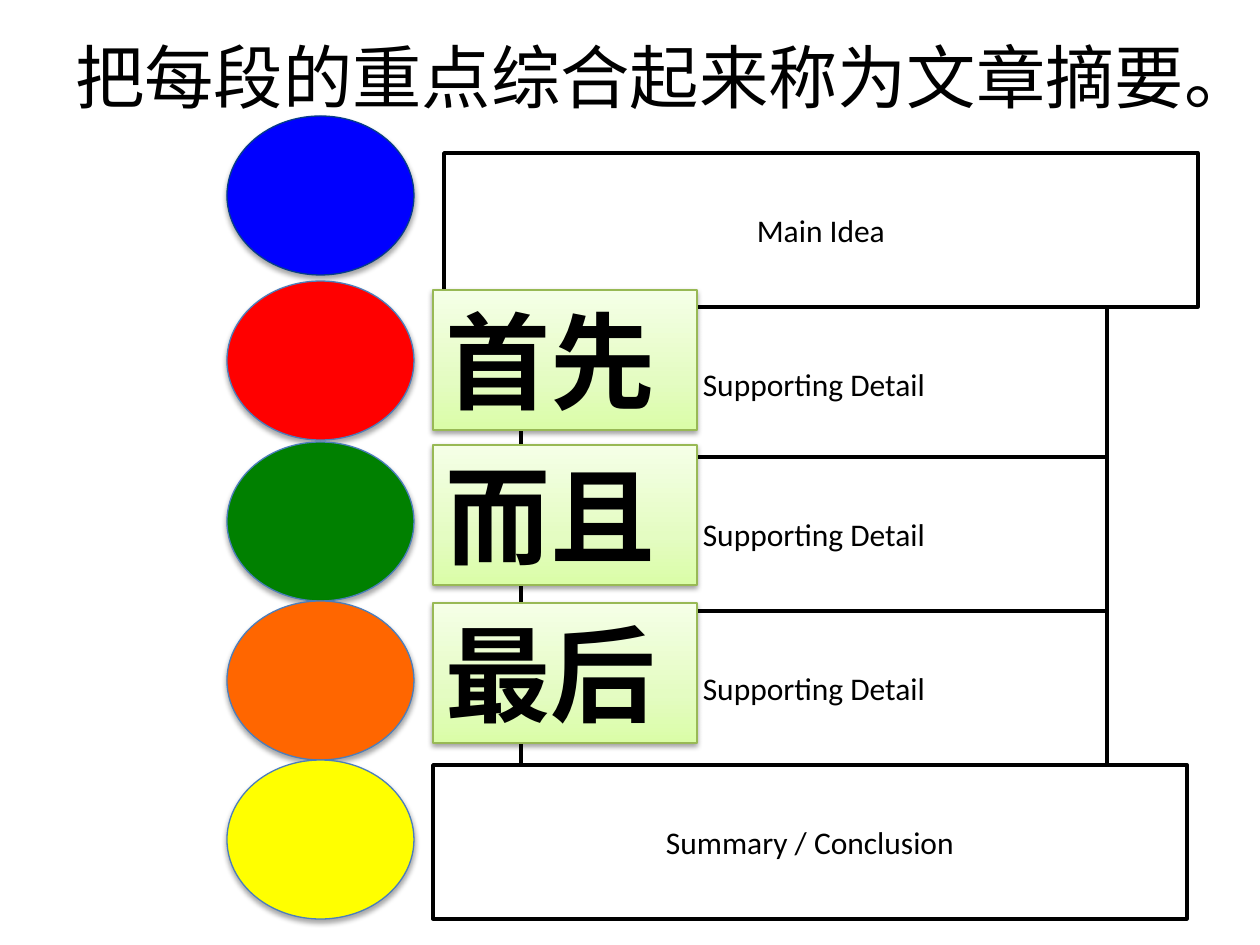
import pptx
import pptx.util
import pptx.dml.color
import pptx.enum.shapes
import pptx.enum.text
import pptx.oxml
import pptx.oxml.ns

EMU_PER_PX = 914400 / 126
FONT = "Calibri"
COLORS = {
    "black": "000000", "white": "FFFFFF",
    "blue": "0000FF", "red": "FF0000", "green": "008000",
    "orange": "FF6600", "yellow": "FFFF00",
    "navy_edge": "073E87", "blue_edge": "4B7EBC", "card_edge": "98B955",
    "card_low": "DAFDA7", "card_mid": "E4FCC2", "card_high": "F5FFE7",
}
CARD_STOPS = [(0, "card_low"), (35, "card_mid"), (100, "card_high")]
SHAPE = pptx.enum.shapes.MSO_SHAPE
ALIGN = pptx.enum.text.PP_ALIGN
ANCHOR = pptx.enum.text.MSO_ANCHOR


def px(*lengths):
    return [pptx.util.Emu(round(n * EMU_PER_PX)) for n in lengths]


def rgb(name):
    return pptx.dml.color.RGBColor.from_string(COLORS[name])


def add_outlined(shapes, kind, box, edge, width):
    shape = shapes.add_shape(kind, *px(*box))
    shape.shadow.inherit = False
    shape.line.color.rgb = rgb(edge)
    shape.line.width = pptx.util.Pt(width)
    return shape


def fill_solid(shape, color):
    shape.fill.solid()
    shape.fill.fore_color.rgb = rgb(color)


def fill_card_gradient(shape):
    shape.fill.gradient()
    shape.fill.gradient_angle = 90
    stops = shape._element.spPr.find(".//" + pptx.oxml.ns.qn("a:gsLst"))
    stops.clear()
    for percent, color in CARD_STOPS:
        stops.append(pptx.oxml.parse_xml(
            f'<a:gs {pptx.oxml.ns.nsdecls("a")} pos="{percent * 1000}">'
            f'<a:srgbClr val="{COLORS[color]}"/></a:gs>'))


def drop_shadow(shape, opacity, distance):
    effects = shape._element.spPr.find(pptx.oxml.ns.qn("a:effectLst"))
    effects.append(pptx.oxml.parse_xml(
        f'<a:outerShdw {pptx.oxml.ns.nsdecls("a")} '
        f'blurRad="{pptx.util.Pt(3.1)}" dist="{pptx.util.Pt(distance)}" '
        f'dir="5400000" rotWithShape="0"><a:srgbClr val="{COLORS["black"]}">'
        f'<a:alpha val="{opacity * 1000}"/></a:srgbClr></a:outerShdw>'))


def set_text(shape, text, size, align, anchor, bold=False):
    frame = shape.text_frame
    frame.word_wrap = True
    frame.vertical_anchor = anchor
    paragraph = frame.paragraphs[0]
    paragraph.text = text
    paragraph.alignment = align
    paragraph.font.name = FONT
    paragraph.font.size = pptx.util.Pt(size)
    paragraph.font.bold = bold
    paragraph.font.color.rgb = rgb("black")


def add_layer(shapes, text, left, top, width):
    layer = add_outlined(shapes, SHAPE.RECTANGLE, (left, top, width, 154), "black", 2)
    fill_solid(layer, "white")
    set_text(layer, text, 18, ALIGN.CENTER, ANCHOR.MIDDLE)


def add_dot(shapes, top, color, edge):
    dot = add_outlined(shapes, SHAPE.OVAL, (227, top, 187, 159), edge, 0.75)
    fill_solid(dot, color)
    drop_shadow(dot, 35, 1.8)


def add_card(shapes, text, top):
    card = add_outlined(shapes, SHAPE.RECTANGLE, (433, top, 264, 140), "card_edge", 0.75)
    fill_card_gradient(card)
    drop_shadow(card, 38, 1.6)
    set_text(card, text, 60, ALIGN.LEFT, ANCHOR.TOP, bold=True)
    card.text_frame.auto_size = pptx.enum.text.MSO_AUTO_SIZE.SHAPE_TO_FIT_TEXT


def add_title(shapes, text):
    title = shapes.add_textbox(*px(63, 38, 1197, 76))
    set_text(title, text, 39.6, ALIGN.LEFT, ANCHOR.MIDDLE)
    title.text_frame.margin_right = 0


def main():
    prs = pptx.Presentation()
    prs.slide_width, prs.slide_height = px(1260, 945)
    shapes = prs.slides.add_slide(prs.slide_layouts[6]).shapes

    # Stacked layers of the burger outline
    burger = shapes.add_group_shape().shapes
    add_layer(burger, "Summary / Conclusion", 433, 765, 754)
    add_layer(burger, "Main Idea", 444, 153, 754)
    for top in (307, 457, 611):
        add_layer(burger, "Supporting Detail", 521, top, 586)

    # Colour dots, one per layer
    for top, color, edge in [(116, "blue", "navy_edge"), (281, "red", "blue_edge"),
                             (442, "green", "blue_edge"), (601, "orange", "blue_edge"),
                             (760, "yellow", "blue_edge")]:
        add_dot(shapes, top, color, edge)

    # Linking-word cards
    for text, top in [("首先", 290), ("而且", 445), ("最后", 603)]:
        add_card(shapes, text, top)

    add_title(shapes, "把每段的重点综合起来称为文章摘要。")
    prs.save("out.pptx")


if __name__ == "__main__":
    main()
